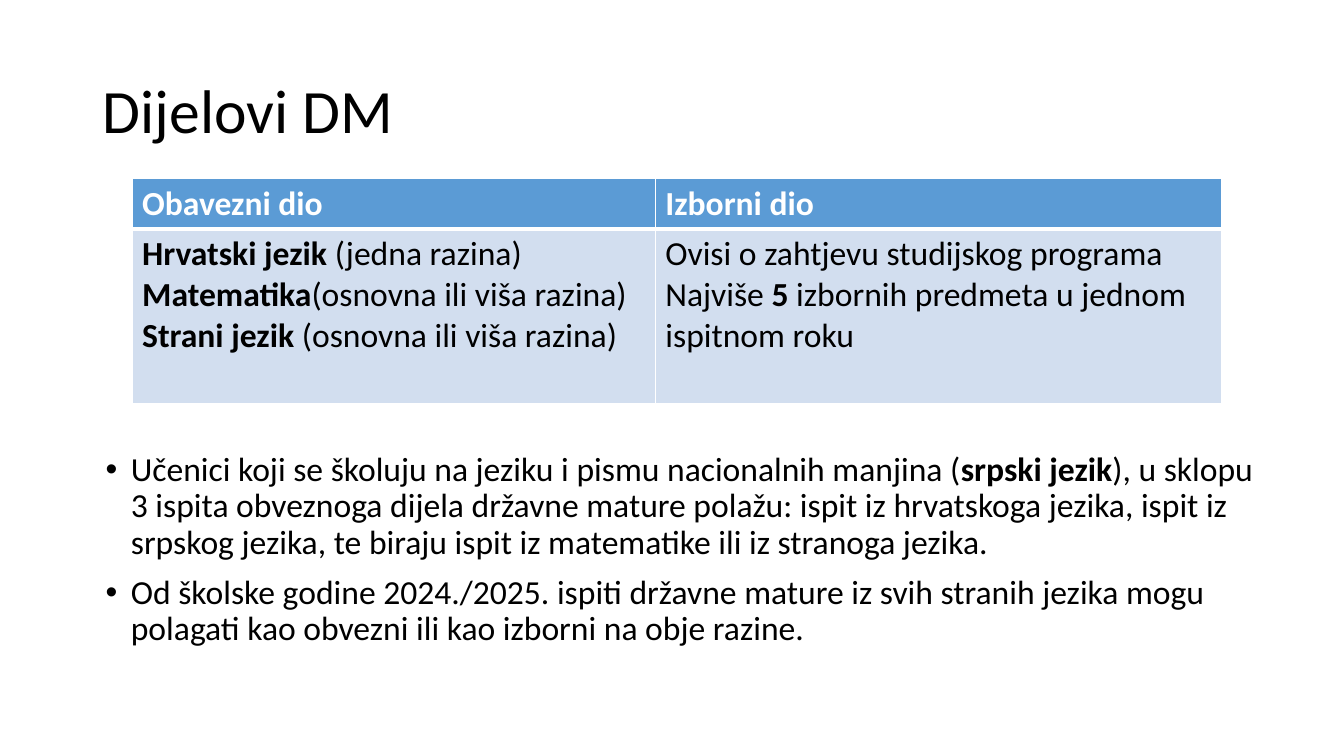
import dataclasses
import typing

import lxml.etree
import pptx
import pptx.dml.color
import pptx.enum.text
import pptx.oxml.ns
import pptx.util

Inches = pptx.util.Inches
Pt = pptx.util.Pt

COLORS = {"text": "000000", "white": "FFFFFF", "head": "5B9BD5", "body": "D2DEEF"}
FONT = "Calibri"


@dataclasses.dataclass(frozen=True)
class Run:
    text: str
    bold: bool = False


@dataclasses.dataclass(frozen=True)
class Cell:
    lines: list[list[Run]]
    fill: str
    ink: str
    base: float  # width of the bottom border in points


HEADS = ["Obavezni dio", "Izborni dio"]
PARTS = [
    [
        [Run("Hrvatski jezik ", True), Run("(jedna razina)")],
        [Run("Matematika", True), Run("(osnovna ili viša razina)")],
        [Run("Strani jezik ", True), Run("(osnovna ili viša razina)")],
    ],
    [
        [Run("Ovisi o zahtjevu studijskog programa")],
        [Run("Najviše "), Run("5 ", True), Run("izbornih predmeta u jednom ispitnom roku")],
    ],
]
ROWS = [
    [Cell([[Run(head, True)]], "head", "white", 3) for head in HEADS],
    [Cell(part, "body", "text", 1) for part in PARTS],
]
WIDTHS = [5.19, 5.62]
HEIGHTS = [0.5, 1.73]
NOTES = [
    [
        Run("Učenici koji se školuju na jeziku i pismu nacionalnih manjina ("),
        Run("srpski jezik", True),
        Run("), u sklopu 3 ispita obveznoga dijela državne mature polažu: ispit iz "
            "hrvatskoga jezika, ispit iz srpskog jezika, te biraju ispit iz matematike "
            "ili iz stranoga jezika."),
    ],
    [
        Run("Od školske godine 2024./2025. ispiti državne mature iz svih stranih jezika "
            "mogu polagati kao obvezni ili kao izborni na obje razine."),
    ],
]


def apply(target: typing.Any, values: dict[str, typing.Any]) -> None:
    for name, value in values.items():
        setattr(target, name, value)


def color(name: str) -> pptx.dml.color.RGBColor:
    return pptx.dml.color.RGBColor.from_string(COLORS[name])


def write(frame: typing.Any, lines: list[list[Run]], ink: str = "text",
          size: float = 24, form: dict[str, typing.Any] | None = None) -> None:
    """Fill a text frame with one paragraph per line of runs."""
    for index, line in enumerate(lines):
        para = frame.add_paragraph() if index else frame.paragraphs[0]
        apply(para, {"alignment": pptx.enum.text.PP_ALIGN.LEFT, **(form or {})})
        for item in line:
            run = para.add_run()
            run.text = item.text
            apply(run.font, {"name": FONT, "size": Pt(size), "bold": item.bold})
            run.font.color.rgb = color(ink)


def add_tag(parent: typing.Any, tag: str, **values: str) -> typing.Any:
    return lxml.etree.SubElement(parent, pptx.oxml.ns.qn(tag), values)


def border(cell: typing.Any, base: float) -> None:
    props = cell._tc.get_or_add_tcPr()
    for side, width in {"L": 1, "R": 1, "T": 1, "B": base}.items():
        line = add_tag(props, f"a:ln{side}", w=str(Pt(width)))
        add_tag(add_tag(line, "a:solidFill"), "a:srgbClr", val=COLORS["white"])


def add_title(slide: typing.Any) -> None:
    title = slide.shapes.title
    apply(title, {"left": Inches(0.92), "top": Inches(0.4),
                  "width": Inches(11.5), "height": Inches(1.45)})
    title.text_frame.vertical_anchor = pptx.enum.text.MSO_ANCHOR.MIDDLE
    write(title.text_frame, [[Run("Dijelovi DM")]], size=44, form={"line_spacing": 0.9})


def add_parts(slide: typing.Any) -> None:
    table = slide.shapes.add_table(
        len(ROWS), len(WIDTHS), Inches(1.31), Inches(1.77),
        Inches(sum(WIDTHS)), Inches(sum(HEIGHTS))).table
    for column, width in zip(table.columns, WIDTHS):
        column.width = Inches(width)
    for row, height, items in zip(table.rows, HEIGHTS, ROWS):
        row.height = Inches(height)
        for cell, item in zip(row.cells, items):
            border(cell, item.base)
            cell.fill.solid()
            cell.fill.fore_color.rgb = color(item.fill)
            write(cell.text_frame, item.lines, item.ink)


def add_notes(slide: typing.Any) -> None:
    """Add the bulleted text below the table."""
    box = slide.shapes.add_textbox(Inches(0.95), Inches(4.44), Inches(11.7), Inches(2.61))
    frame = box.text_frame
    frame.word_wrap = True
    write(frame, NOTES, form={"line_spacing": 0.9})
    frame.paragraphs[1].space_before = Pt(10)
    for para in frame.paragraphs:
        props = para._p.get_or_add_pPr()
        props.set("marL", str(Inches(0.25)))
        props.set("indent", str(Inches(-0.25)))
        add_tag(props, "a:buFont", typeface="Arial")
        add_tag(props, "a:buChar", char="•")


def main() -> None:
    deck = pptx.Presentation()
    apply(deck, {"slide_width": Inches(13.33), "slide_height": Inches(7.5)})
    slide = deck.slides.add_slide(deck.slide_layouts.get_by_name("Title Only"))
    add_title(slide)
    add_notes(slide)
    add_parts(slide)
    deck.save("out.pptx")


if __name__ == "__main__":
    main()
